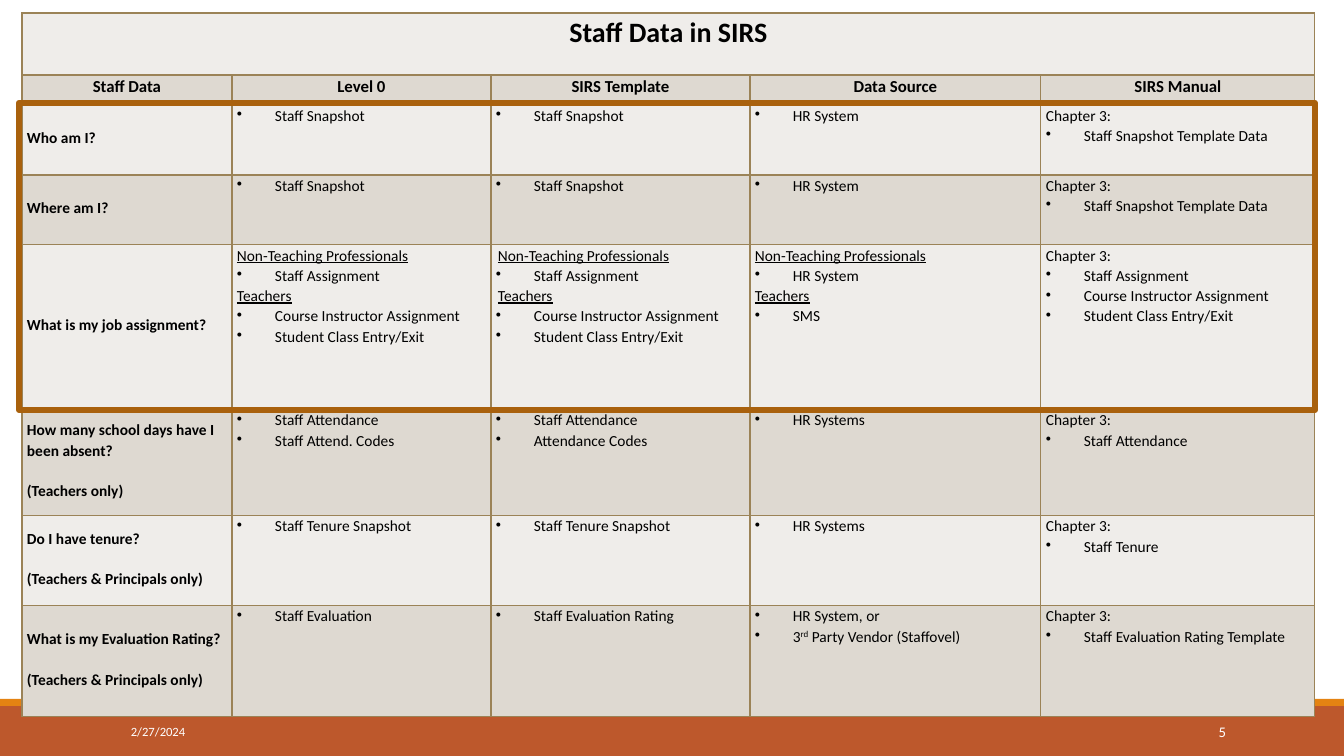
from dataclasses import dataclass

import pptx
import pptx.dml.color
import pptx.enum.shapes
import pptx.enum.text
import pptx.oxml
import pptx.oxml.ns
import pptx.util

ALIGN = pptx.enum.text.PP_ALIGN
ANCHOR = pptx.enum.text.MSO_ANCHOR
PX = 914400 / 100.8


def px(n):
    return pptx.util.Emu(round(n * PX))


def rgb(color):
    return pptx.dml.color.RGBColor.from_string(color)


@dataclass(frozen=True)
class Theme:
    font: str = "Calibri"
    text: str = "000000"
    light: str = "FFFFFF"
    footer_bar: str = "BD582C"
    footer_strip: str = "E48312"
    frame: str = "A9610D"
    border: str = "9B8357"
    bands: tuple = ("EFEDEA", "DED9D1")
    title_size: float = 20
    header_size: float = 12
    body_size: float = 11
    date_size: float = 9
    number_size: float = 10.5
    line_spacing: float = 1.07
    gap: float = 14.4
    border_width: float = 1
    frame_width: float = 4.5


class SlideBuilder:
    def __init__(self, prs, theme):
        self.theme = theme
        self.slide = prs.slides.add_slide(prs.slide_layouts[6])

    def rect(self, x, y, w, h, fill=None, line=None):
        sp = self.slide.shapes.add_shape(
            pptx.enum.shapes.MSO_SHAPE.RECTANGLE, px(x), px(y), px(w), px(h))
        sp.shadow.inherit = False
        if fill:
            sp.fill.solid()
            sp.fill.fore_color.rgb = rgb(fill)
        else:
            sp.fill.background()
        if line:
            sp.line.color.rgb = rgb(line)
            sp.line.width = pptx.util.Pt(self.theme.frame_width)
        else:
            sp.line.fill.background()

    def run(self, p, text, size, color, bold=False, underline=False, raised=False):
        r = p.add_run()
        r.text = text
        r.font.name = self.theme.font
        r.font.size = pptx.util.Pt(size)
        r.font.color.rgb = rgb(color)
        r.font.bold = bold
        r.font.underline = underline
        if raised:
            r.font._element.set("baseline", "30000")

    def label(self, x, y, w, h, text, size, align):
        tf = self.slide.shapes.add_textbox(px(x), px(y), px(w), px(h)).text_frame
        tf.word_wrap = True
        tf.vertical_anchor = ANCHOR.MIDDLE
        p = tf.paragraphs[0]
        p.alignment = align
        self.run(p, text, size, self.theme.light)

    def table(self, x, y, widths, heights):
        table = self.slide.shapes.add_table(
            len(heights), len(widths), px(x), px(y),
            px(sum(widths)), px(sum(heights))).table
        table.first_row = table.horz_banding = False
        for column, w in zip(table.columns, widths):
            column.width = px(w)
        for i, (row, h) in enumerate(zip(table.rows, heights)):
            row.height = px(h)
            for cell in row.cells:
                self.cell_style(cell, self.theme.bands[i % 2])
        return table

    def cell_style(self, cell, fill):
        cell.margin_left = cell.margin_right = cell.margin_bottom = px(5)
        cell.margin_top = 0
        cell.fill.solid()
        cell.fill.fore_color.rgb = rgb(fill)
        tc_pr = cell._tc.get_or_add_tcPr()
        width = pptx.util.Pt(self.theme.border_width)
        for i, side in enumerate(("lnL", "lnR", "lnT", "lnB")):
            tc_pr.insert(i, pptx.oxml.parse_xml(
                f'<a:{side} {pptx.oxml.ns.nsdecls("a")} w="{width}"><a:solidFill>'
                f'<a:srgbClr val="{self.theme.border}"/></a:solidFill></a:{side}>'))

    def cell_text(self, cell, lines, size, bold=False, align=ALIGN.LEFT,
                  anchor=ANCHOR.TOP, heading_indent=0):
        """Each line is (kind, text); text between ^ marks is superscript."""
        cell.vertical_anchor = anchor
        tf = cell.text_frame
        for i, (kind, text) in enumerate(lines):
            p = tf.paragraphs[0] if i == 0 else tf.add_paragraph()
            p.alignment = align
            p.line_spacing = self.theme.line_spacing
            if kind == "note":
                p.space_before = pptx.util.Pt(self.theme.gap)
            p_pr = p._p.get_or_add_pPr()
            if kind == "bullet":
                p_pr.set("marL", str(px(38)))
                p_pr.set("indent", str(px(-38)))
                p_pr.append(pptx.oxml.parse_xml(
                    f'<a:buChar {pptx.oxml.ns.nsdecls("a")} char="•"/>'))
            elif kind == "heading":
                p_pr.set("marL", str(px(heading_indent)))
            for j, part in enumerate(text.split("^")):
                self.run(p, part, size, self.theme.text, bold,
                         kind == "heading", j % 2 == 1)


def bullets(*items):
    return [("bullet", item) for item in items]


def chapter(*items):
    return [("plain", "Chapter 3:")] + bullets(*items)


def assignment(staff, *teachers):
    return ([("heading", "Non-Teaching Professionals")] + bullets(staff)
            + [("heading", "Teachers")] + bullets(*teachers))


def question(text, note=None):
    return [("plain", text)] + ([("note", note)] if note else [])


HEADERS = ("Staff Data", "Level 0", "SIRS Template", "Data Source", "SIRS Manual")
SNAPSHOT = [bullets("Staff Snapshot"), bullets("Staff Snapshot"),
            bullets("HR System"), chapter("Staff Snapshot Template Data")]
COURSES = ("Course Instructor Assignment", "Student Class Entry/Exit")
STAFF_COURSES = assignment("Staff Assignment", *COURSES)
LEADERS = "(Teachers & Principals only)"
ROWS = [
    [question("Who am I?")] + SNAPSHOT,
    [question("Where am I?")] + SNAPSHOT,
    [question("What is my job assignment?"), STAFF_COURSES, STAFF_COURSES,
     assignment("HR System", "SMS"), chapter("Staff Assignment", *COURSES)],
    [question("How many school days have I been absent?", "(Teachers only)"),
     bullets("Staff Attendance", "Staff Attend. Codes"),
     bullets("Staff Attendance", "Attendance Codes"),
     bullets("HR Systems"), chapter("Staff Attendance")],
    [question("Do I have tenure?", LEADERS), bullets("Staff Tenure Snapshot"),
     bullets("Staff Tenure Snapshot"), bullets("HR Systems"), chapter("Staff Tenure")],
    [question("What is my Evaluation Rating?", LEADERS), bullets("Staff Evaluation"),
     bullets("Staff Evaluation Rating"),
     bullets("HR System, or", "3^rd^ Party Vendor (Staffovel)"),
     chapter("Staff Evaluation Rating Template")],
]


def main():
    prs = pptx.Presentation()
    prs.slide_width, prs.slide_height = px(1344), px(756)
    theme = Theme()
    s = SlideBuilder(prs, theme)

    # Footer band
    s.rect(0, 706, 1344, 50, fill=theme.footer_bar)
    s.rect(0, 699, 1344, 7, fill=theme.footer_strip)

    # Staff data table: title row, header row, questions
    table = s.table(22, 13, (210, 259, 259, 291, 274),
                    (62, 30, 70, 70, 165, 106, 90, 111))
    table.cell(0, 0).merge(table.cell(0, 4))
    s.cell_text(table.cell(0, 0), [("plain", "Staff Data in SIRS")],
                theme.title_size, bold=True, align=ALIGN.CENTER)
    for c, header in enumerate(HEADERS):
        s.cell_text(table.cell(1, c), [("plain", header)],
                    theme.header_size, bold=True, align=ALIGN.CENTER)
    for i, row in enumerate(ROWS, start=2):
        for c, lines in enumerate(row):
            s.cell_text(table.cell(i, c), lines, theme.body_size, bold=c == 0,
                        anchor=ANCHOR.TOP if c else ANCHOR.MIDDLE,
                        heading_indent=2 if c == 2 else 0)

    # Frame around the first three questions
    s.rect(19, 103, 1296, 307, line=theme.frame)

    # Date and slide number
    s.label(121, 712, 272, 40, "2/27/2024", theme.date_size, ALIGN.LEFT)
    s.label(1092, 712, 144, 40, "5", theme.number_size, ALIGN.RIGHT)

    prs.save("out.pptx")


if __name__ == "__main__":
    main()
